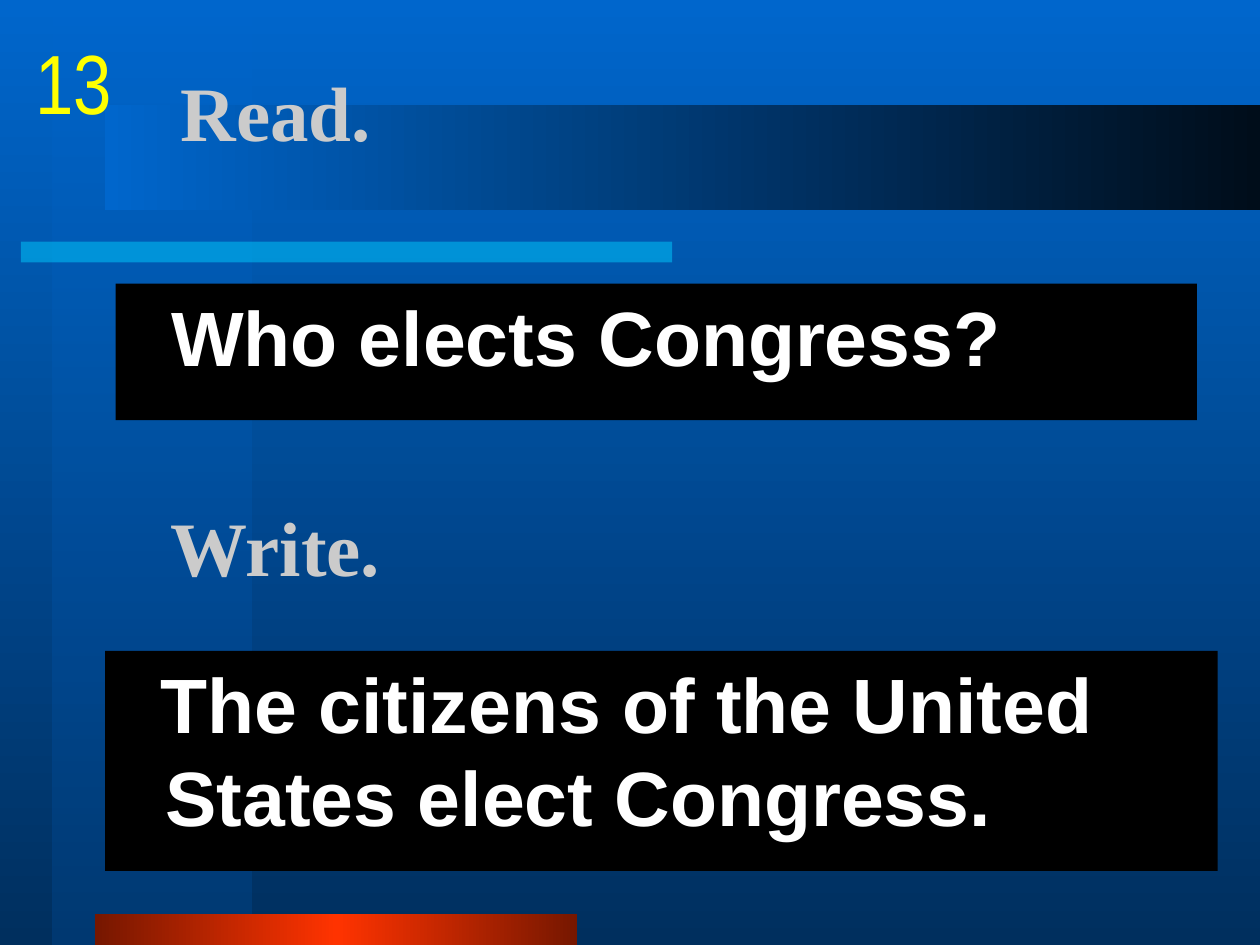
import dataclasses

import lxml.etree
import pptx
import pptx.dml.color
import pptx.enum.shapes
import pptx.enum.text
import pptx.oxml.ns
import pptx.util

Cm = pptx.util.Cm
Pt = pptx.util.Pt
RGB = pptx.dml.color.RGBColor.from_string
qn = pptx.oxml.ns.qn
ANCHOR = pptx.enum.text.MSO_ANCHOR
ALIGN = pptx.enum.text.PP_ALIGN

DOWN, RIGHTWARD = 270, 0


@dataclasses.dataclass(frozen=True)
class Theme:
    backdrop: tuple = ("0066CC", "002F5E")
    stripe: tuple = ("0066CC", "004285")
    title_band: tuple = ("0066CC", "000D1A")
    footer_band: tuple = ("761700", "FF3300", "761700")
    rule: str = "00CCFF"
    panel: str = "000000"
    cue_font: dict = dataclasses.field(default_factory=lambda: {
        "name": "Times New Roman", "size": Pt(44), "bold": True, "color": "CBCBCB"})
    panel_font: dict = dataclasses.field(default_factory=lambda: {
        "name": "Arial", "size": Pt(44), "bold": True, "color": "FFFFFF"})
    number_font: dict = dataclasses.field(default_factory=lambda: {
        "name": "Arial Narrow", "size": Pt(48), "bold": False, "color": "FFFF00"})


THEME = Theme()


def set_alpha(element, percent):
    """Make every plain colour below the element partly transparent."""
    for color in element.iter(qn("a:srgbClr")):
        lxml.etree.SubElement(color, qn("a:alpha"), val=str(percent * 1000))


def set_gradient(fill, element, colors, angle):
    """Spread the colours evenly along the gradient held by the element."""
    fill.gradient()
    fill.gradient_angle = angle
    stops = next(element.iter(qn("a:gsLst")))
    for stop in list(stops):
        stops.remove(stop)
    for index, color in enumerate(colors):
        position = str(100000 * index // (len(colors) - 1))
        stop = lxml.etree.SubElement(stops, qn("a:gs"), pos=position)
        lxml.etree.SubElement(stop, qn("a:srgbClr"), val=color)


def add_bar(page, place, colors, angle=RIGHTWARD, alpha=None):
    """Add an unlined rectangle; a single colour string gives a solid fill."""
    bar = page.shapes.add_shape(
        pptx.enum.shapes.MSO_SHAPE.RECTANGLE, *map(Cm, place))
    bar.shadow.inherit = False
    bar.line.fill.background()
    if isinstance(colors, str):
        bar.fill.solid()
        bar.fill.fore_color.rgb = RGB(colors)
    else:
        set_gradient(bar.fill, bar.element, colors, angle)
    if alpha is not None:
        set_alpha(bar.element.spPr, alpha)


def add_text(page, place, text, font, anchor=ANCHOR.MIDDLE, wrap=True, align=ALIGN.LEFT):
    box = page.shapes.add_textbox(*map(Cm, place))
    frame_format = {"word_wrap": wrap, "vertical_anchor": anchor}
    for name, value in frame_format.items():
        setattr(box.text_frame, name, value)
    para = box.text_frame.paragraphs[0]
    para.alignment = align
    span = para.add_run()
    span.text = text
    for name, value in font.items():
        if name == "color":
            span.font.color.rgb = RGB(value)
        else:
            setattr(span.font, name, value)
    return box


def add_panel(page, place, text):
    """Add a solid text panel whose wrapped lines hang slightly inward."""
    box = add_text(page, place, text, THEME.panel_font, ANCHOR.TOP)
    box.fill.solid()
    box.fill.fore_color.rgb = RGB(THEME.panel)
    para = box.text_frame.paragraphs[0]
    para.space_before = Pt(4)
    properties = para._p.get_or_add_pPr()
    for name, value in {"marL": Cm(0.97), "indent": Cm(-0.1)}.items():
        properties.set(name, str(int(value)))


def add_decoration(page):
    set_gradient(page.background.fill, page.element, THEME.backdrop, DOWN)
    add_bar(page, (1.06, 0, 4.02, 19.05), THEME.stripe, DOWN, alpha=50)
    add_bar(page, (0.42, 4.87, 13.13, 0.42), THEME.rule, alpha=50)
    add_bar(page, (1.92, 18.42, 9.72, 0.63), THEME.footer_band)
    add_bar(page, (2.12, 2.12, 23.28, 2.12), THEME.title_band)


def main():
    deck = pptx.Presentation()
    deck.slide_width, deck.slide_height = Cm(25.4), Cm(19.05)
    page = deck.slides.add_slide(deck.slide_layouts[6])
    add_decoration(page)
    add_text(page, (3.39, 0.64, 21.59, 3.18), "Read.", THEME.cue_font)
    add_panel(page, (2.33, 5.72, 21.8, 2.75), "Who elects Congress?")
    add_text(page, (3.18, 8.89, 21.59, 4.23), "Write.", THEME.cue_font)
    add_panel(page, (2.12, 13.12, 22.43, 4.44),
              "The citizens of the United States elect Congress.")
    add_text(page, (0.42, 0.5, 2.12, 2.12), "13", THEME.number_font,
             ANCHOR.TOP, wrap=False, align=ALIGN.CENTER)
    deck.save("out.pptx")


if __name__ == "__main__":
    main()
